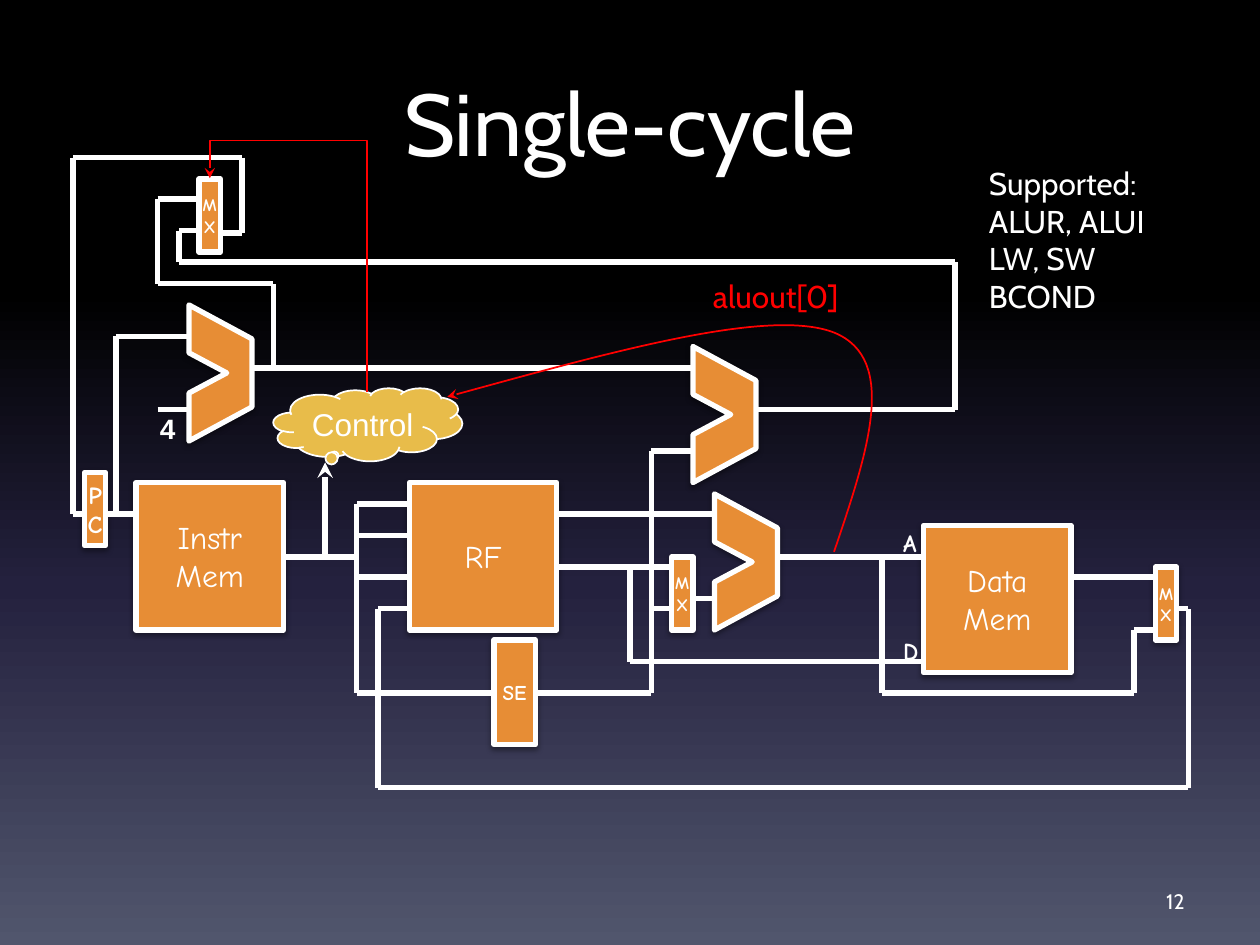
from itertools import pairwise

from lxml.etree import SubElement
from pptx import Presentation
from pptx.dml.color import RGBColor
from pptx.enum.shapes import MSO_CONNECTOR as CONNECTOR, MSO_SHAPE as SHAPE
from pptx.enum.text import MSO_ANCHOR as ANCHOR, MSO_AUTO_SIZE as AUTO_SIZE, PP_ALIGN as ALIGN
from pptx.oxml.ns import qn
from pptx.util import Inches, Pt

COLORS = {"white": "FFFFFF", "orange": "E78D35", "gold": "E8BC4A", "red": "FF0000", "black": "000000"}
BACKGROUND_STOPS = [(0, "000000"), (31, "000000"), (62, "24213E"), (100, "51566D")]


def color(name):
    return RGBColor.from_string(COLORS[name])


def write_text(shape, text, size=18, font="Cabin", fill="white", bold=False,
               align=ALIGN.LEFT, anchor=ANCHOR.TOP, wrap=False, fit=AUTO_SIZE.NONE):
    frame = shape.text_frame
    frame.text = text
    frame.word_wrap = wrap
    frame.auto_size = fit
    frame.vertical_anchor = anchor
    for paragraph in frame.paragraphs:
        paragraph.alignment = align
        for run in paragraph.runs:
            run.font.size = Pt(size)
            run.font.name = font
            run.font.bold = bold
            run.font.color.rgb = color(fill)


presentation = Presentation()
presentation.slide_width, presentation.slide_height = Inches(10), Inches(7.5)
slide = presentation.slides.add_slide(presentation.slide_layouts[5])
shapes = slide.shapes

# Background gradient, top to bottom
background = slide.background.fill
background.gradient()
background.gradient_angle = 270
stops = slide.element.find(".//" + qn("a:gsLst"))
stops.clear()
for position, value in BACKGROUND_STOPS:
    stop = SubElement(stops, qn("a:gs"), pos=str(position * 1000))
    SubElement(stop, qn("a:srgbClr"), val=value)

# Title and page number
title = shapes.title
title.left, title.top, title.width, title.height = map(Inches, (0.5, 0.5, 9, 1.25))
write_text(title, "Single-cycle", size=50, align=ALIGN.CENTER, wrap=True)
page_number = shapes.add_textbox(*map(Inches, (7.17, 6.95, 2.33, 0.4)))
write_text(page_number, "12", size=12, align=ALIGN.RIGHT, anchor=ANCHOR.MIDDLE, wrap=True)

# Memories, registers and multiplexers: text, left, top, width, height, size
MEMORY, NARROW = (1.17, 1.17, 18), (0.17, 0.58)
blocks = [
    ("Instr\nMem", 1.08, 3.83, *MEMORY),
    ("P\nC", 0.67, 3.75, *NARROW, 14),
    ("M\nX", 1.58, 1.42, *NARROW, 10),
    ("RF", 3.25, 3.83, *MEMORY),
    ("Data\nMem", 7.33, 4.17, *MEMORY),
    ("M\nX", 9.17, 4.5, *NARROW, 10),
    ("M\nX", 5.33, 4.42, *NARROW, 10),
    ("SE", 3.92, 5.08, 0.33, 0.83, 12),
]
units = []
for text, left, top, width, height, size in blocks:
    block = shapes.add_shape(SHAPE.RECTANGLE, *map(Inches, (left, top, width, height)))
    write_text(block, text, size=size, font="Comic Neue", bold=size < 18,
               align=ALIGN.CENTER, anchor=ANCHOR.MIDDLE)
    units.append(block)

# Adders and ALU, one outline at three places
ALU_OUTLINE = [(0.5, 0.27), (0.5, 0.81), (0, 1.08), (0, 0.7), (0.3, 0.54), (0, 0.38)]
for left, top in [(1.5, 2.42), (5.5, 2.75), (5.67, 3.92)]:
    builder = shapes.build_freeform(Inches(left), Inches(top))
    builder.add_line_segments([(Inches(left + x), Inches(top + y)) for x, y in ALU_OUTLINE])
    units.append(builder.convert_to_shape())

for unit in units:
    unit.fill.solid()
    unit.fill.fore_color.rgb = color("orange")
    unit.line.color.rgb = color("white")
    unit.line.width = Pt(3)
    unit.shadow.inherit = False
    effects = unit.element.spPr.find(qn("a:effectLst"))
    shadow = SubElement(effects, qn("a:outerShdw"), blurRad=str(Pt(3.1)), dist=str(Pt(1.6)),
                        dir="5400000", rotWithShape="0")
    shadow_color = SubElement(shadow, qn("a:srgbClr"), val=COLORS["black"])
    SubElement(shadow_color, qn("a:alpha"), val="38000")

# Wires: each route is a chain of corner points
routes = [
    [(0.83, 4.08), (1.08, 4.08)],
    [(0.92, 4.08), (0.92, 2.67), (1.5, 2.67)],
    [(1.25, 3.25), (1.5, 3.25)],
    [(2, 2.92), (5.5, 2.92)],
    [(2.25, 4.42), (2.83, 4.42)],
    [(3.25, 4), (2.83, 4), (2.83, 5.5), (3.92, 5.5)],
    [(2.83, 4.25), (3.25, 4.25)],
    [(2.83, 4.58), (3.25, 4.58)],
    [(8.5, 4.58), (9.17, 4.58)],
    [(6.17, 4.42), (7.33, 4.42)],
    [(7, 4.42), (7, 5.5), (9, 5.5), (9, 5), (9.17, 5)],
    [(4.42, 4.08), (5.67, 4.08)],
    [(5.5, 4.75), (5.67, 4.75)],
    [(0.67, 4.08), (0.58, 4.08), (0.58, 1.25), (1.92, 1.25), (1.92, 1.85), (1.75, 1.85)],
    [(3.25, 4.83), (3, 4.83), (3, 6.25), (9.43, 6.25), (9.43, 4.83), (9.33, 4.83)],
    [(4.42, 4.5), (5.33, 4.5)],
    [(5, 4.5), (5, 5.25), (7.33, 5.25)],
    [(2.17, 2.92), (2.17, 2.25), (1.25, 2.25), (1.25, 1.58), (1.58, 1.58)],
    [(4.25, 5.5), (5.17, 5.5), (5.17, 3.58), (5.5, 3.58)],
    [(5.17, 4.83), (5.33, 4.83)],
]
branch_target = [(6, 3.25), (7.58, 3.25), (7.58, 2.08), (1.42, 2.08), (1.42, 1.83), (1.58, 1.83)]
control_input = [(2.58, 4.42), (2.58, 3.67)]
wires = []
branch_group = shapes.add_group_shape()
for holder, route in [(branch_group.shapes, branch_target),
                      *((shapes, route) for route in routes)]:
    for start, end in pairwise(route):
        wires.append(holder.add_connector(CONNECTOR.STRAIGHT, *map(Inches, start + end)))

# Control cloud
cloud = shapes.add_shape(SHAPE.CLOUD_CALLOUT, *map(Inches, (2.17, 3.08, 1.5, 0.58)))
cloud.adjustments[0], cloud.adjustments[1] = -0.177, 0.426
cloud.fill.solid()
cloud.fill.fore_color.rgb = color("gold")
cloud.line.color.rgb = color("white")
cloud.line.width = Pt(1)
cloud.shadow.inherit = False
write_text(cloud, "Control", font="Arial")

# Arrow into the cloud, and elbow from the cloud to the PC multiplexer
control_arrow = shapes.add_connector(CONNECTOR.STRAIGHT, *map(Inches, control_input[0] + control_input[1]))
wires.append(control_arrow)
select_arrow = shapes.add_connector(CONNECTOR.ELBOW, *map(Inches, (1.44, 2.89, 3.14, 1.64)))
select_arrow.element.spPr.find(qn("a:xfrm")).set("rot", str(270 * 60000))
guides = select_arrow.element.spPr.find(".//" + qn("a:avLst"))
SubElement(guides, qn("a:gd"), name="adj1", fmla="val 117600")

for connector in [*wires, select_arrow]:
    connector.line.color.rgb = color("red" if connector is select_arrow else "white")
    connector.line.width = Pt(1 if connector is select_arrow else 3)
    SubElement(connector.element.spPr, qn("a:effectLst"))

# Curved feedback from the ALU: straight segments give the box, then become curves
LEFT, TOP = 3.55, 2.58
builder = shapes.build_freeform(Inches(6.62), Inches(4.38))
builder.add_line_segments([(Inches(6.92), Inches(TOP)), (Inches(LEFT), Inches(3.15))], close=False)
feedback = builder.convert_to_shape()
feedback.fill.background()
feedback.line.color.rgb = color("red")
feedback.line.width = Pt(1)
feedback.shadow.inherit = False
curves = [[(6.88, 3.61), (7.14, 2.85), (6.62, 2.64)], [(6.11, 2.44), (4.83, 2.8), (3.55, 3.15)]]
for segment, curve in zip(feedback.element.findall(".//" + qn("a:lnTo")), curves):
    outline = segment.getparent()
    outline.remove(segment)
    bezier = SubElement(outline, qn("a:cubicBezTo"))
    for x, y in curve:
        SubElement(bezier, qn("a:pt"), x=str(Inches(x - LEFT)), y=str(Inches(y - TOP)))

for arrow in (control_arrow, select_arrow, feedback):
    SubElement(arrow.element.spPr.find(qn("a:ln")), qn("a:tailEnd"), type="stealth")

# Labels
labels = [
    ("4", (1.17, 3.22, 0.33, 0.37), dict(size=16, font="Arial", bold=True)),
    ("A", (7.07, 4.14, 0.35, 0.34), dict(size=14, font="Comic Neue", bold=True)),
    ("D", (7.07, 5, 0.34, 0.34), dict(size=14, font="Comic Neue", bold=True)),
    ("Supported:\nALUR, ALUI\nLW, SW\nBCOND", (7.75, 1.25, 1.56, 1.62), {}),
    ("aluout[0]", (5.56, 2.15, 1.69, 0.4), dict(fill="red", wrap=True)),
]
for text, box, text_format in labels:
    label = shapes.add_textbox(*map(Inches, box))
    write_text(label, text, fit=AUTO_SIZE.SHAPE_TO_FIT_TEXT, **text_format)

presentation.save("out.pptx")
